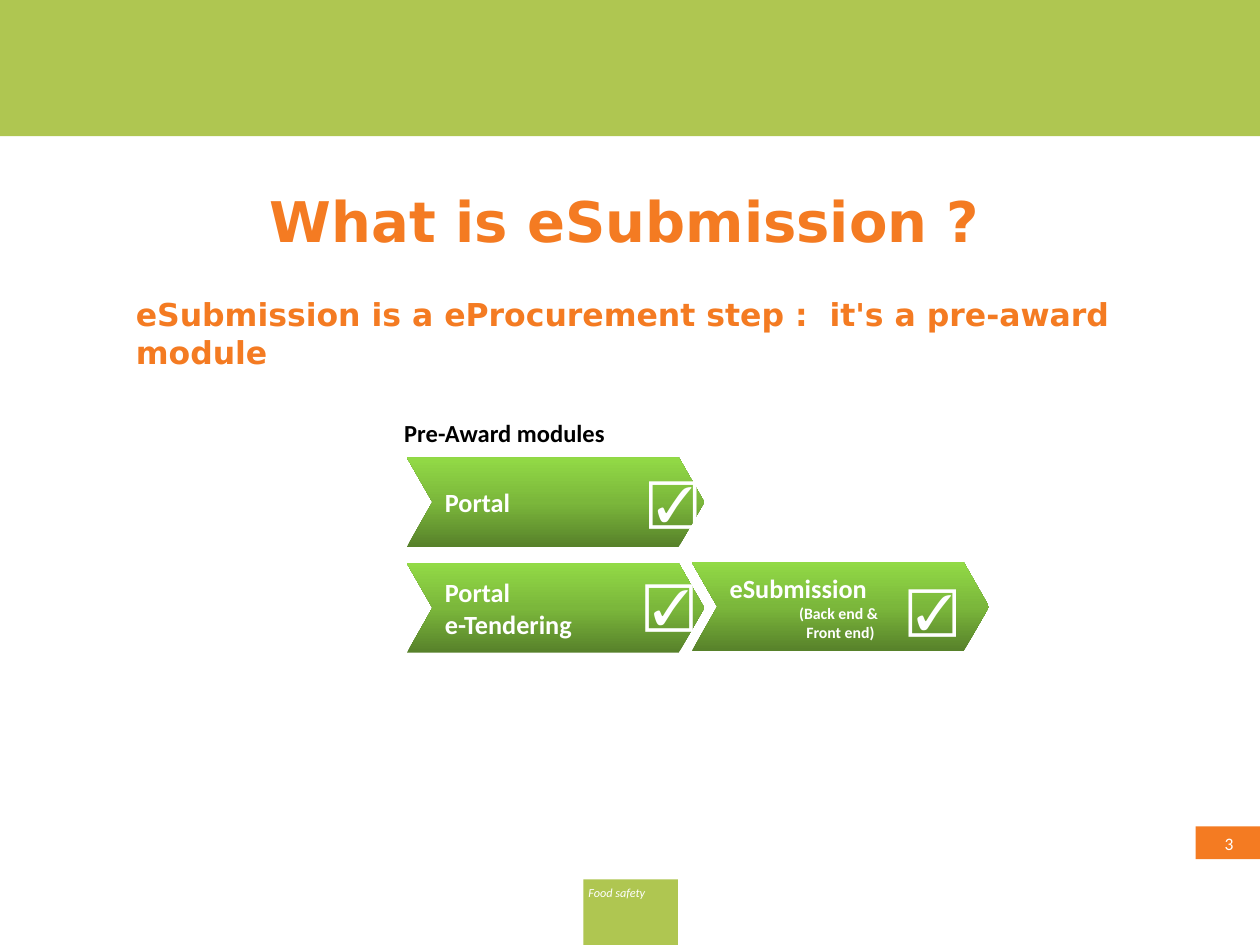
"""Build the slide that places eSubmission among the pre-award modules."""
import copy

import pptx
import pptx.dml.color
import pptx.enum.shapes
import pptx.enum.text
import pptx.util

Inches = pptx.util.Inches
Align = pptx.enum.text.PP_ALIGN
Anchor = pptx.enum.text.MSO_ANCHOR
Preset = pptx.enum.shapes.MSO_SHAPE

COLORS = {
    "lime": "AFC651", "orange": "F47B22", "white": "FFFFFF", "black": "000000",
    "dark green": "57812A", "green": "7BB73B", "light green": "92DA46",
}
GRADIENT = [(0, "dark green"), (0.5, "green"), (1, "light green")]
STYLES = {
    "title": {"name": "DejaVu Sans", "size": 32, "bold": True, "color": "orange"},
    "body": {"name": "DejaVu Sans", "size": 18, "bold": True, "color": "orange"},
    "heading": {"name": "Calibri", "size": 14, "bold": True, "color": "black"},
    "module": {"name": "Calibri", "size": 15, "bold": True, "color": "white"},
    "detail": {"name": "Calibri", "size": 9, "bold": True, "color": "white"},
    "check": {"name": "Cambria", "size": 28, "bold": True, "color": "white"},
    "number": {"name": "Calibri", "size": 10, "color": "white"},
    "footer": {"name": "Calibri", "size": 7, "italic": True, "color": "white"},
}
MARGINS = (0.1, 0.05, 0.1, 0.05)

BANDS = [
    ((0, 0, 10, 1.08), "lime", [], MARGINS),
    ((4.63, 6.98, 0.75, 0.53), "lime", [("Food safety", "footer", Align.LEFT)],
     (0.04, 0.05, 0.1, 0.05)),
    ((9.49, 6.56, 0.53, 0.26), "orange", [("3", "number", Align.CENTER)], MARGINS),
]
TEXTS = [
    ((0.75, 1.47, 8.42, 0.55), ("What is eSubmission ?", "title", Align.CENTER), Anchor.MIDDLE),
    ((0.98, 2.29, 8.5, 0.98),
     ("eSubmission is a eProcurement step :  it's a pre-award module", "body", Align.LEFT),
     Anchor.TOP),
    ((3.11, 3.27, 2.76, 0.34), ("Pre-Award modules", "heading", Align.LEFT), Anchor.TOP),
]
MODULE_SIZE = (2.36, 0.71)
MODULES = [
    ((5.49, 4.46), [("eSubmission", "module", Align.LEFT),
                    ("(Back end & \vFront end)", "detail", Align.CENTER)]),
    ((3.23, 3.63), [("Portal", "module", Align.LEFT)]),
    ((3.23, 4.47), [("Portal \ve-Tendering", "module", Align.LEFT)]),
]
CHECKS = [(5.05, 4.47, 0.52, 0.63), (5.13, 3.63, 0.42, 0.67), (7.14, 4.51, 0.52, 0.63)]


def rgb(name):
    return pptx.dml.color.RGBColor.from_string(COLORS[name])


def write(shape, lines, anchor, margins=MARGINS, wrap=True):
    frame = shape.text_frame
    frame.word_wrap = wrap
    frame.vertical_anchor = anchor
    for side, margin in zip(("left", "top", "right", "bottom"), margins):
        setattr(frame, f"margin_{side}", Inches(margin))
    for index, (text, style, alignment) in enumerate(lines):
        paragraph = frame.add_paragraph() if index else frame.paragraphs[0]
        paragraph.text = text
        paragraph.alignment = alignment
        for key, value in STYLES[style].items():
            if key == "color":
                paragraph.font.color.rgb = rgb(value)
            else:
                setattr(paragraph.font, key, pptx.util.Pt(value) if key == "size" else value)


def add_shape(slide, preset, box):
    shape = slide.shapes.add_shape(preset, *map(Inches, box))
    shape.shadow.inherit = False
    shape.line.fill.background()
    return shape


def add_band(slide, box, color, lines, margins):
    shape = add_shape(slide, Preset.RECTANGLE, box)
    shape.fill.solid()
    shape.fill.fore_color.rgb = rgb(color)
    write(shape, lines, Anchor.TOP, margins)


def add_module(slide, position, lines):
    shape = add_shape(slide, Preset.CHEVRON, position + MODULE_SIZE)
    shape.adjustments[0] = 0.286
    shape.fill.gradient()
    shape.fill.gradient_angle = 90
    first_stop = shape.fill.gradient_stops[0]._gs
    first_stop.addnext(copy.deepcopy(first_stop))
    for stop, (position, color) in zip(shape.fill.gradient_stops, GRADIENT):
        stop.position = position
        stop.color.rgb = rgb(color)
    write(shape, lines, Anchor.MIDDLE)


def add_text(slide, box, line, anchor, **options):
    shape = slide.shapes.add_textbox(*map(Inches, box))
    write(shape, [line], anchor, **options)
    return shape


def main():
    presentation = pptx.Presentation()
    presentation.slide_width, presentation.slide_height = Inches(10), Inches(7.5)
    slide = presentation.slides.add_slide(presentation.slide_layouts[6])
    for band in BANDS:
        add_band(slide, *band)
    for module in MODULES:
        add_module(slide, *module)
    for text in TEXTS:
        add_text(slide, *text)
    for box in CHECKS:
        check = add_text(slide, box, ("☑", "check", Align.CENTER), Anchor.MIDDLE,
                         margins=(0, 0, 0, 0), wrap=False)
        check.text_frame.paragraphs[0].space_after = pptx.util.Pt(9)
    presentation.save("out.pptx")


if __name__ == "__main__":
    main()
